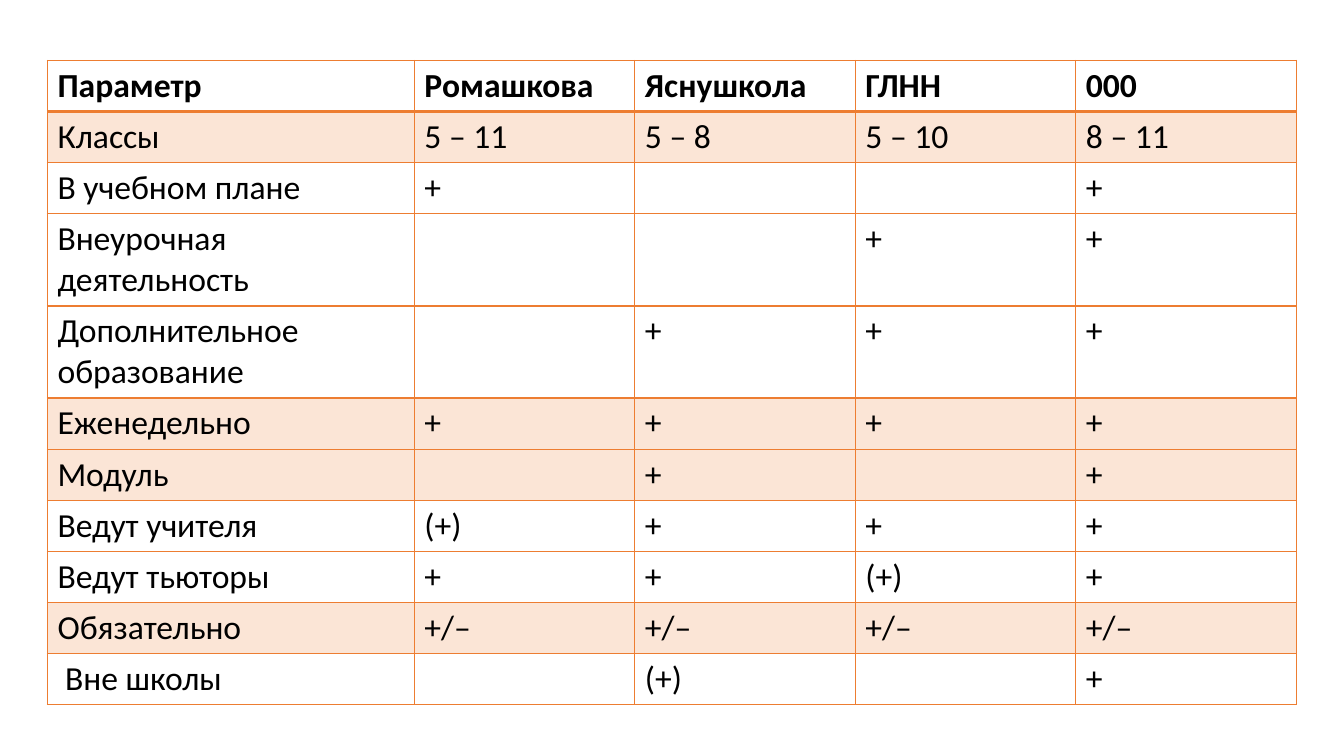
from lxml.etree import SubElement
from pptx import Presentation
from pptx.dml.color import RGBColor
from pptx.oxml.ns import qn
from pptx.util import Pt

ORANGE = RGBColor(0xED, 0x7D, 0x31)
PEACH = RGBColor(0xFB, 0xE5, 0xD6)
BLACK = RGBColor(0, 0, 0)

LINE_HEIGHT = 29.3
CELL_PADDING = 7.2
PARAMETER_WIDTH = 262.1
SCHOOL_WIDTH = 157.5
TABLE_LEFT = 33.9
TABLE_TOP = 43.2

HEADINGS = ["Параметр", "Ромашкова", "Яснушкола", "ГЛНН", "000"]
PARAMETERS = [
    ["Классы", "5 – 11", "5 – 8", "5 – 10", "8 – 11"],
    ["В учебном плане", "+", "", "", "+"],
    ["Внеурочная деятельность", "", "", "+", "+"],
    ["Дополнительное образование", "", "+", "+", "+"],
    ["Еженедельно", "+", "+", "+", "+"],
    ["Модуль", "", "+", "", "+"],
    ["Ведут учителя", "(+)", "+", "+", "+"],
    ["Ведут тьюторы", "+", "+", "(+)", "+"],
    ["Обязательно", "+/–", "+/–", "+/–", "+/–"],
    [" Вне школы", "", "(+)", "", "+"],
]
SHADED = {"Классы", "Еженедельно", "Модуль", "Обязательно"}
TWO_LINE = {"Внеурочная деятельность", "Дополнительное образование"}


def write_text(frame, text, size=24, bold=False, color=BLACK, font="Calibri"):
    para = frame.paragraphs[0]
    para.font.size = Pt(size)
    if text:
        span = para.add_run()
        span.text = text
        span.font.name = font
        span.font.size = Pt(size)
        span.font.bold = bold
        span.font.color.rgb = color


def set_borders(cell, top=1, bottom=1):
    properties = cell._tc.get_or_add_tcPr()
    for side, width in (("L", 1), ("R", 1), ("T", top), ("B", bottom)):
        line = SubElement(properties, qn(f"a:ln{side}"), w=str(Pt(width)))
        fill = SubElement(line, qn("a:solidFill"))
        SubElement(fill, qn("a:srgbClr"), val=str(ORANGE))


def set_fill(cell, color=None):
    if color is None:
        cell.fill.background()
    else:
        cell.fill.solid()
        cell.fill.fore_color.rgb = color


def fill_row(table, index, texts):
    label = texts[0]
    lines = 2 if label in TWO_LINE else 1
    table.rows[index].height = Pt(lines * LINE_HEIGHT + CELL_PADDING)
    for cell, text in zip(table.rows[index].cells, texts):
        write_text(cell.text_frame, text, bold=index == 0)
        set_borders(cell, top=2 if index == 1 else 1, bottom=2 if index == 0 else 1)
        set_fill(cell, PEACH if label in SHADED else None)


def add_comparison_table(page, rows):
    widths = [PARAMETER_WIDTH] + [SCHOOL_WIDTH] * (len(HEADINGS) - 1)
    height = (len(rows) + len(TWO_LINE)) * LINE_HEIGHT + len(rows) * CELL_PADDING
    table = page.shapes.add_table(
        len(rows), len(widths), Pt(TABLE_LEFT), Pt(TABLE_TOP), Pt(sum(widths)), Pt(height)
    ).table
    table.horz_banding = False
    for column, width in zip(table.columns, widths):
        column.width = Pt(width)
    for index, texts in enumerate(rows):
        fill_row(table, index, texts)


def main():
    deck = Presentation()
    deck.slide_width, deck.slide_height = Pt(960), Pt(540)
    page = deck.slides.add_slide(deck.slide_layouts[6])
    add_comparison_table(page, [HEADINGS] + PARAMETERS)
    deck.save("out.pptx")


if __name__ == "__main__":
    main()
